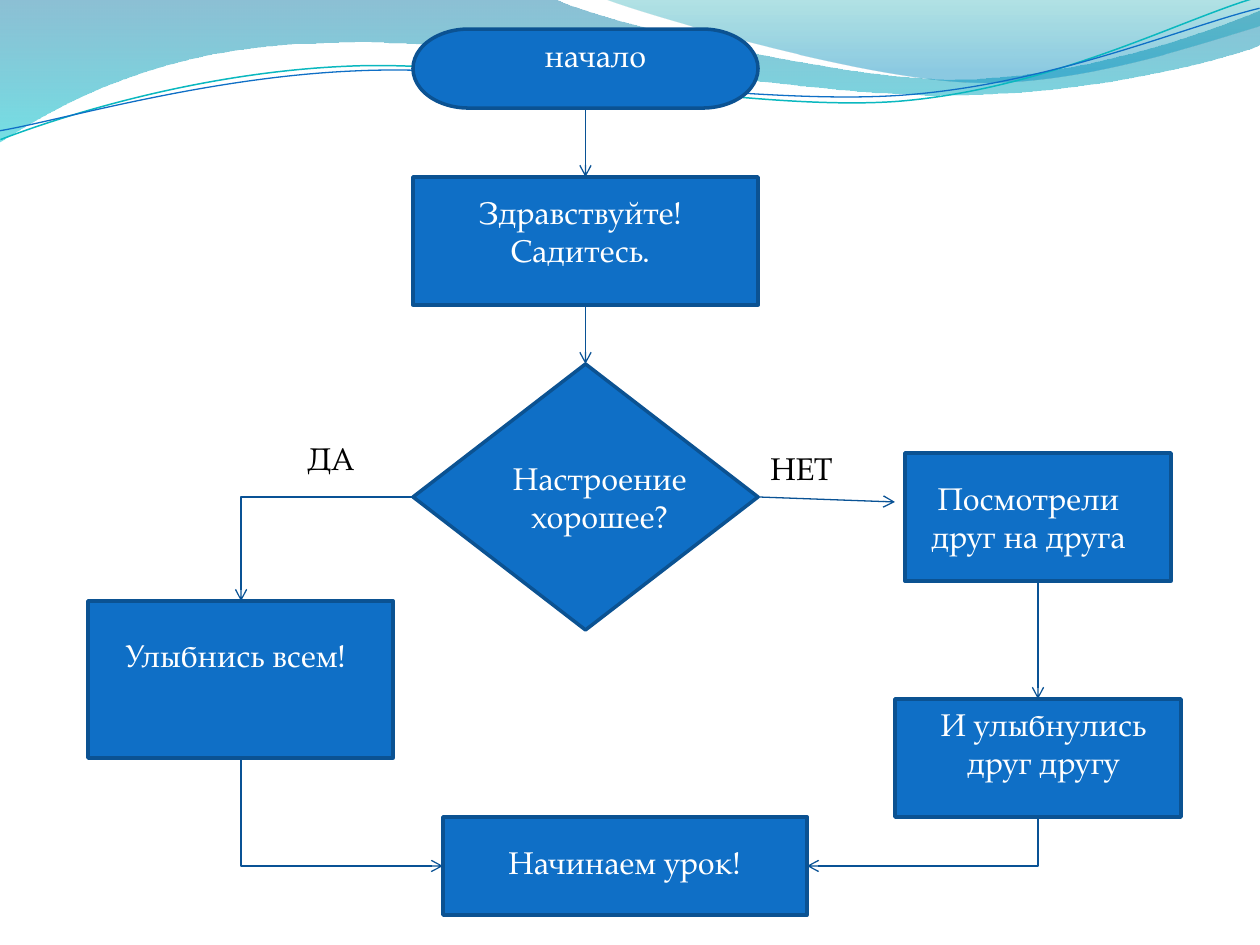
from lxml import etree
from pptx import Presentation
from pptx import util as u
from pptx.dml.color import RGBColor
from pptx.enum import shapes, text
from pptx.oxml.ns import qn

PX = 914400 / 126
FONT = "TeX Gyre Pagella"
WHITE = RGBColor(0xFF, 0xFF, 0xFF)
BLACK = RGBColor(0x00, 0x00, 0x00)
BLUE = RGBColor(0x0F, 0x6F, 0xC6)
BORDER = RGBColor(0x0B, 0x52, 0x92)
ARROW = RGBColor(0x09, 0x52, 0x95)
TEAL = RGBColor(0x0A, 0xB8, 0xBF)
WAVE_TOP = RGBColor(0x00, 0x74, 0xA1)
WAVE_BOTTOM = RGBColor(0x00, 0xC6, 0xCF)
CREST_TOP = RGBColor(0x00, 0xA1, 0xA9)
CREST_BOTTOM = RGBColor(0x00, 0x8B, 0xBF)
TERMINATOR = shapes.MSO_SHAPE.FLOWCHART_TERMINATOR
PROCESS = shapes.MSO_SHAPE.FLOWCHART_PROCESS
DECISION = shapes.MSO_SHAPE.FLOWCHART_DECISION
TOP, LEFT, BOTTOM, RIGHT = range(4)


def px(*lengths):
    return [u.Emu(round(n * PX)) for n in lengths]


def add_curve(slide, start, segments, close):
    """Outline of lines (x, y) and cubic curves (three x, y pairs)."""
    builder = slide.shapes.build_freeform(*px(*start), scale=1.0)
    points = [px(*segment[i:i + 2]) for segment in segments
              for i in range(0, len(segment), 2)]
    builder.add_line_segments(points, close=close)
    curve = builder.convert_to_shape()
    curve.shadow.inherit = False
    # Merge the three lines of each curve into one cubic segment
    lines = iter(list(curve._element.iter(qn("a:lnTo"))))
    for segment in segments:
        first = next(lines)
        if len(segment) == 6:
            first.tag = qn("a:cubicBezTo")
            for line in (next(lines), next(lines)):
                first.append(line[0])
                line.getparent().remove(line)
    return curve


def add_wave(slide, start, segments, stops):
    wave = add_curve(slide, start, segments, close=True)
    wave.line.fill.background()
    wave.fill.gradient()
    wave.fill.gradient_angle = 270
    for stop, (position, color, _) in zip(wave.fill.gradient_stops, stops):
        stop.position = position
        stop.color.rgb = color
    for node, (_, _, opacity) in zip(wave._element.spPr.iter(qn("a:srgbClr")), stops):
        etree.SubElement(node, qn("a:alpha")).set("val", str(opacity * 1000))


def add_ribbon(slide, start, segments, color, width):
    ribbon = add_curve(slide, start, segments, close=False)
    ribbon.rotation = 357.3
    ribbon.fill.background()
    ribbon.line.color.rgb = color
    ribbon.line.width = u.Pt(width)


def add_step(slide, kind, *box):
    step = slide.shapes.add_shape(kind, *px(*box))
    step.shadow.inherit = False
    step.fill.solid()
    step.fill.fore_color.rgb = BLUE
    step.line.color.rgb = BORDER
    step.line.width = u.Pt(2)
    return step


def add_text(slide, wording, box, color=WHITE, align=text.PP_ALIGN.CENTER, size=18):
    frame = slide.shapes.add_textbox(*px(*box)).text_frame
    frame.word_wrap = True
    frame.auto_size = text.MSO_AUTO_SIZE.SHAPE_TO_FIT_TEXT
    frame.text = wording
    for paragraph in frame.paragraphs:
        paragraph.alignment = align
        for run in paragraph.runs:
            font = run.font
            font.name, font.size, font.color.rgb = FONT, u.Pt(size), color


def add_arrow(slide, start, end, kind=shapes.MSO_CONNECTOR.STRAIGHT):
    arrow = slide.shapes.add_connector(kind, *px(*start, *end))
    arrow.line.color.rgb = ARROW
    arrow.line.width = u.Pt(0.75)
    etree.SubElement(arrow.line._get_or_add_ln(), qn("a:tailEnd")).set("type", "arrow")
    etree.SubElement(arrow._element.spPr, qn("a:effectLst"))
    return arrow


def join_down(slide, upper, lower):
    arrow = add_arrow(slide, (0, 0), (0, 0))
    arrow.begin_connect(upper, BOTTOM)
    arrow.end_connect(lower, TOP)


def add_elbow(slide, start, end, down_first=False):
    """One-bend arrow, turned about its centre to leave in the right direction."""
    rotation = 180
    if down_first:
        (x0, y0), (x1, y1) = start, end
        side = 1 if x1 > x0 else -1
        cx, cy = (x0 + x1) / 2, (y0 + y1) / 2
        half_w, half_h = side * (y1 - y0) / 2, abs(x1 - x0) / 2
        start, end = (cx + half_w, cy - half_h), (cx - half_w, cy + half_h)
        rotation += 90 * side
    else:
        start, end = end, start
    elbow = add_arrow(slide, start, end, shapes.MSO_CONNECTOR.ELBOW)
    properties = elbow._element.spPr
    properties.find(qn("a:prstGeom")).set("prst", "bentConnector2")
    properties.find(qn("a:xfrm")).set("rot", str(rotation * 60000))


def add_background(slide):
    add_wave(slide, (0, 0),
             [(554, -1), (600, 21, 837, 79, 955, 79), (1074, 79, 1207, 33, 1260, 11),
              (1261, 45), (1239, 55, 1096, 96, 940, 95), (784, 95, 481, 35, 324, 43),
              (163, 45, 58, 105, -1, 142), (0, 0)],
             [(0, WAVE_TOP, 45), (1, WAVE_BOTTOM, 55)])
    add_wave(slide, (604, -1),
             [(641, 14, 859, 78, 969, 82), (1079, 87, 1211, 40, 1260, 26),
              (1260, 0), (604, -1)],
             [(0, CREST_TOP, 30), (0.8, CREST_BOTTOM, 45)])
    add_ribbon(slide, (-2, 110),
               [(58, 90, 199, 52, 349, 53), (499, 53, 745, 118, 896, 114),
                (1049, 109, 1184, 45, 1260, 27)], TEAL, 0.85)
    add_ribbon(slide, (-2, 101),
               [(57, 94, 207, 57, 357, 58), (509, 58, 750, 112, 902, 108),
                (1052, 104, 1188, 52, 1262, 38)], BLUE, 0.75)


def main():
    deck = Presentation()
    deck.slide_width, deck.slide_height = px(1260, 945)
    slide = deck.slides.add_slide(deck.slide_layouts[6])
    add_background(slide)

    # Steps of the flowchart
    begin = add_step(slide, TERMINATOR, 413, 29, 345, 79)
    greeting = add_step(slide, PROCESS, 413, 177, 345, 128)
    mood = add_step(slide, DECISION, 413, 364, 345, 266)
    add_step(slide, PROCESS, 88, 601, 305, 157)
    look = add_step(slide, PROCESS, 905, 453, 266, 128)
    smiled = add_step(slide, PROCESS, 895, 699, 286, 118)
    add_step(slide, PROCESS, 443, 817, 364, 98)

    # Wording of the steps
    for wording, box in (
        ("Здравствуйте!\nСадитесь.", (433, 187, 295, 89)),
        ("Настроение хорошее?", (472, 453, 256, 89)),
        ("Улыбнись всем!", (108, 630, 256, 89)),
        ("Посмотрели друг на друга", (915, 473, 227, 89)),
        ("И улыбнулись друг другу", (925, 699, 237, 89)),
        ("Начинаем урок!", (453, 837, 344, 50)),
    ):
        add_text(slide, wording, box)

    # Arrows
    for upper, lower in ((begin, greeting), (greeting, mood), (look, smiled)):
        join_down(slide, upper, lower)
    add_arrow(slide, (758, 497), (895, 502)).begin_connect(mood, RIGHT)
    add_elbow(slide, (413, 497), (241, 601))
    add_elbow(slide, (241, 758), (443, 866), down_first=True)
    add_elbow(slide, (1038, 817), (807, 866), down_first=True)

    # Answers on the branches
    for answer, box in (("ДА", (295, 433, 88, 50)), ("НЕТ", (758, 443, 108, 50))):
        add_text(slide, answer, box, color=BLACK, align=text.PP_ALIGN.LEFT)

    # Label of the first step
    add_text(slide, "начало", (482, 30, 227, 50))

    deck.save("out.pptx")


if __name__ == "__main__":
    main()
